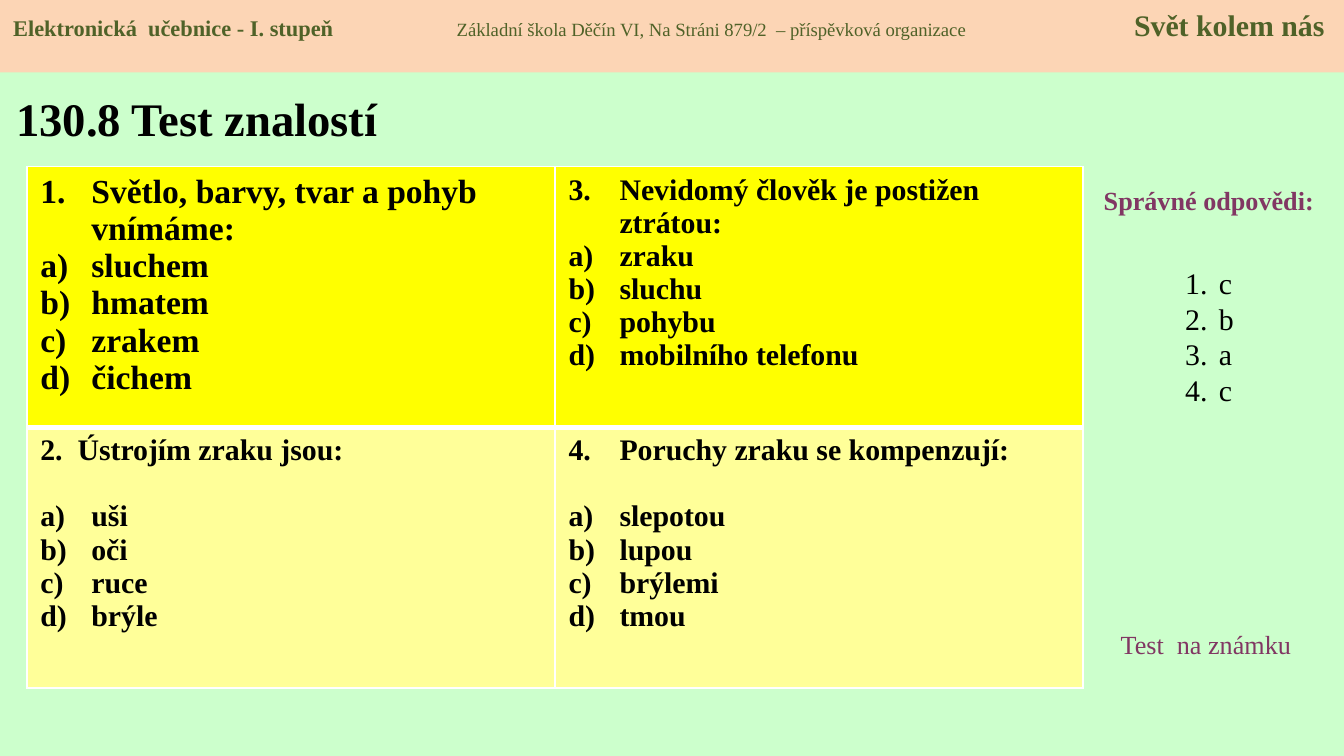
from lxml import etree
from pptx import Presentation
from pptx.dml.color import RGBColor
from pptx.enum.shapes import MSO_SHAPE
from pptx.enum.text import MSO_ANCHOR, PP_ALIGN
from pptx.oxml.ns import qn
from pptx.util import Inches, Pt

RECT = MSO_SHAPE.RECTANGLE
TOP, MIDDLE = MSO_ANCHOR.TOP, MSO_ANCHOR.MIDDLE
LEFT, CENTER = PP_ALIGN.LEFT, PP_ALIGN.CENTER
FONT = "Times New Roman"
HUES = {
    "page": "CCFFCC", "band": "FCD5B5", "green": "4F6228", "plum": "813763",
    "ink": "000000", "line": "FFFFFF", "top": "FFFF00", "low": "FFFF99",
}


def add_run(para, text, size, hue="ink", bold=False):
    run = para.add_run()
    run.text = text
    font = run.font
    font.name, font.size, font.bold = FONT, Pt(size), bold
    font.color.rgb = RGBColor.from_string(HUES[hue])


def number(para, kind, indent, start=1):
    props = para._p.get_or_add_pPr()
    props.set("marL", str(Inches(indent)))
    props.set("indent", str(-Inches(indent)))
    mark = etree.SubElement(props, qn("a:buAutoNum"), type=kind)
    if start > 1:
        mark.set("startAt", str(start))


prs = Presentation()
prs.slide_width, prs.slide_height = Inches(10), Inches(10 * 9 / 16)
slide = prs.slides.add_slide(prs.slide_layouts[5])
shapes = slide.shapes
back = slide.background.fill
back.solid()
back.fore_color.rgb = RGBColor.from_string(HUES["page"])

title = shapes.title
title.left, title.top = Inches(0.02), Inches(0.55)
title.width, title.height = Inches(3.19), Inches(0.65)
title.text_frame.vertical_anchor = MIDDLE
para = title.text_frame.paragraphs[0]
para.alignment = LEFT
add_run(para, "130.8 Test znalostí", 25, bold=True)

labels = [
    ("Správné odpovědi:", 8.05, 1.32, 1.89, True, CENTER),
    ("Test  na známku", 8.24, 4.63, 1.57, False, LEFT),
]
for text, left, top, width, bold, align in labels:
    box = shapes.add_textbox(Inches(left), Inches(top), Inches(width), Inches(0.34))
    para = box.text_frame.paragraphs[0]
    para.alignment = align
    add_run(para, text, 14, "plum", bold)

quiz = [
    (0, 0, 18, 1, 0, "Světlo, barvy, tvar a pohyb vnímáme:",
     ["sluchem", "hmatem", "zrakem", "čichem"]),
    (1, 0, 16, 0, 17.7, "2.  Ústrojím zraku jsou:",
     ["uši", "oči", "ruce", "brýle"]),
    (0, 1, 16, 3, 0, "Nevidomý člověk je postižen ztrátou:",
     ["zraku", "sluchu", "pohybu", "mobilního telefonu"]),
    (1, 1, 16, 4, 17.7, "Poruchy zraku se kompenzují:",
     ["slepotou", "lupou", "brýlemi", "tmou"]),
]
table = shapes.add_table(2, 2, Inches(0.2), Inches(1.24), Inches(7.86), Inches(3.88)).table
table.first_row = table.horz_banding = False
for row, col, size, start, gap, query, picks in quiz:
    cell = table.cell(row, col)
    props = cell._tc.get_or_add_tcPr()
    thick = "lnT" if row else "lnB"
    for side in ("lnL", "lnR", "lnT", "lnB"):
        width = Pt(3 if side == thick else 1)
        line = etree.SubElement(props, qn("a:" + side), w=str(width))
        paint = etree.SubElement(line, qn("a:solidFill"))
        etree.SubElement(paint, qn("a:srgbClr"), val=HUES["line"])
    cell.fill.solid()
    cell.fill.fore_color.rgb = RGBColor.from_string(HUES["low" if row else "top"])
    frame = cell.text_frame
    para = frame.paragraphs[0]
    para.space_after = Pt(gap)
    if start:
        number(para, "arabicPeriod", 0.38, start)
    add_run(para, query, size, bold=True)
    for pick in picks:
        para = frame.add_paragraph()
        number(para, "alphaLcParenR", 0.38)
        add_run(para, pick, size, bold=True)

box = shapes.add_textbox(Inches(8.72), Inches(1.65), Inches(0.55), Inches(1.99))
frame = box.text_frame
frame.margin_top = Inches(0.32)
for spot, key in enumerate("cbac"):
    para = frame.add_paragraph() if spot else frame.paragraphs[0]
    para.line_spacing = Pt(19.1)
    number(para, "arabicPeriod", 0.25)
    add_run(para, key, 16)

band = shapes.add_shape(RECT, 0, 0, Inches(10), Inches(0.54))
band.shadow.inherit = False
band.fill.solid()
band.fill.fore_color.rgb = RGBColor.from_string(HUES["band"])
band.line.fill.background()
frame = band.text_frame
frame.vertical_anchor = TOP
frame.margin_top = Inches(0.05)
para = frame.paragraphs[0]
para.alignment = LEFT
tabs = etree.SubElement(para._p.get_or_add_pPr(), qn("a:tabLst"))
for stop in (3.3, 8.34):
    etree.SubElement(tabs, qn("a:tab"), pos=str(Inches(stop)), algn="l")
add_run(para, "Elektronická  učebnice - I. stupeň\t", 12, "green", True)
add_run(para, "Základní škola Děčín VI, Na Stráni 879/2  – příspěvková organizace\t", 10, "green")
add_run(para, "Svět kolem nás", 16, "green", True)

prs.save("out.pptx")
